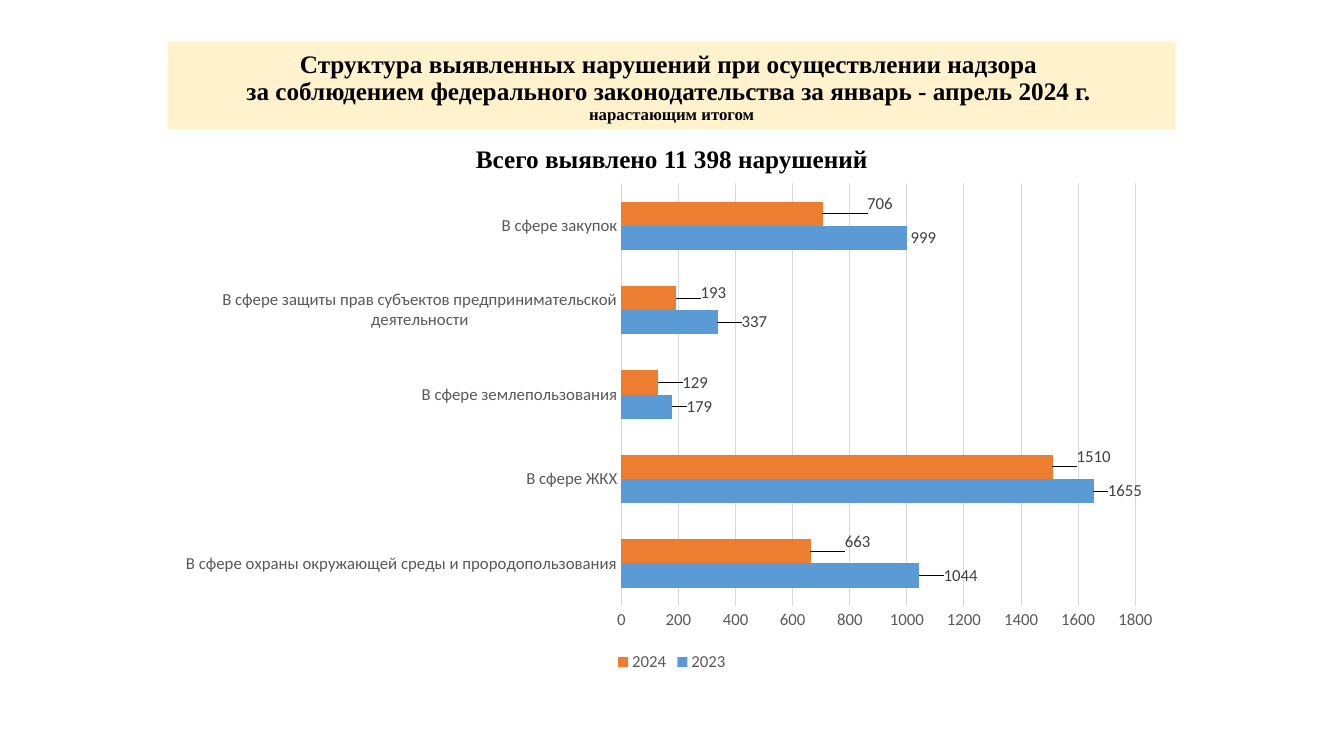
from dataclasses import dataclass

import pptx
import pptx.chart.data
import pptx.dml.color
import pptx.enum.chart
import pptx.enum.shapes
import pptx.enum.text
import pptx.oxml
import pptx.oxml.ns
import pptx.util

Cm = pptx.util.Cm
Pt = pptx.util.Pt


@dataclass(frozen=True)
class Theme:
    heading_font: str = "Times New Roman"
    chart_font: str = "Calibri"
    ink: str = "000000"
    banner: str = "FFF2CC"
    axis_text: str = "595959"
    label_text: str = "404040"
    grid: str = "D9D9D9"
    heading_size: int = 18
    note_size: int = 12
    chart_size: int = 12


THEME = Theme()
CATEGORIES = [
    "В сфере охраны окружающей среды и прородопользования",
    "В сфере ЖКХ",
    "В сфере землепользования",
    "В сфере защиты прав субъектов предпринимательской деятельности",
    "В сфере закупок",
]
# Year, colour, values, and the shift of each label as a share of the chart
SERIES = [
    ("2023", "5B9BD5", [1044, 1655, 179, 337, 999],
     [(0.02, 0), (0.01, 0), (0.01, 0), (0.02, 0), (0, 0)]),
    ("2024", "ED7D31", [663, 1510, 129, 193, 706],
     [(0.03, -0.02), (0.02, -0.02), (0.02, 0), (0.02, -0.01), (0.04, -0.02)]),
]


def rgb(value):
    return pptx.dml.color.RGBColor.from_string(value)


def set_all(target, values):
    for name, value in values.items():
        setattr(target, name, value)


def style_font(font, name, size, color, bold=False):
    set_all(font, {"name": name, "size": Pt(size), "bold": bold})
    font.color.rgb = rgb(color)


def add_heading_span(para, text, size):
    span = para.add_run()
    span.text = text
    style_font(span.font, THEME.heading_font, size, THEME.ink, bold=True)


def manual_layout(**values):
    """Build a c:layout element from its child names and values."""
    children = "".join(f'<c:{name} val="{value}"/>' for name, value in values.items())
    return pptx.oxml.parse_xml(
        f'<c:layout {pptx.oxml.ns.nsdecls("c")}>'
        f"<c:manualLayout>{children}</c:manualLayout></c:layout>"
    )


def add_banner(page, left, top, width, height):
    box = page.shapes.add_shape(
        pptx.enum.shapes.MSO_SHAPE.RECTANGLE, left, top, width, height)
    box.shadow.inherit = False
    box.fill.solid()
    box.fill.fore_color.rgb = rgb(THEME.banner)
    box.line.fill.background()
    set_all(box.text_frame, {
        "word_wrap": True,
        "vertical_anchor": pptx.enum.text.MSO_ANCHOR.BOTTOM,
    })
    para = box.text_frame.paragraphs[0]
    set_all(para, {"alignment": pptx.enum.text.PP_ALIGN.CENTER, "line_spacing": 0.9})
    for line in ("Структура выявленных нарушений при осуществлении надзора ",
                 "за соблюдением федерального законодательства за январь - апрель 2024 г. "):
        add_heading_span(para, line, THEME.heading_size)
        para.add_line_break()
    add_heading_span(para, "нарастающим итогом", THEME.note_size)


def add_total(page, left, top, width, height):
    box = page.shapes.add_textbox(left, top, width, height)
    box.text_frame.word_wrap = True
    para = box.text_frame.paragraphs[0]
    set_all(para, {"alignment": pptx.enum.text.PP_ALIGN.CENTER, "line_spacing": 0.8})
    add_heading_span(para, "Всего выявлено 11 398 нарушений", THEME.heading_size)


def style_axis(axis):
    none = pptx.enum.chart.XL_TICK_MARK.NONE
    set_all(axis, {"major_tick_mark": none, "minor_tick_mark": none})
    axis.format.line.fill.background()
    style_font(axis.tick_labels.font, THEME.chart_font, THEME.chart_size, THEME.axis_text)


def style_series(series, color, shifts):
    series.format.fill.solid()
    series.format.fill.fore_color.rgb = rgb(color)
    series.invert_if_negative = False
    outside = pptx.enum.chart.XL_LABEL_POSITION.OUTSIDE_END
    set_all(series.data_labels, {"show_value": True, "position": outside})
    labels = [series.points[index].data_label for index in range(len(shifts))]
    for label in [series.data_labels, *labels]:
        label.position = outside
        style_font(label.font, THEME.chart_font, THEME.chart_size, THEME.label_text)
    point_labels = series.data_labels._element.findall(pptx.oxml.ns.qn("c:dLbl"))
    for element, (across, down) in zip(point_labels, shifts):
        element.insert(1, manual_layout(x=across, y=down))


def add_violations_chart(page, left, top, width, height):
    data = pptx.chart.data.CategoryChartData()
    data.categories = CATEGORIES
    for year, _, values, _ in SERIES:
        data.add_series(year, values)
    chart = page.shapes.add_chart(
        pptx.enum.chart.XL_CHART_TYPE.BAR_CLUSTERED, left, top, width, height, data).chart
    set_all(chart, {"has_title": False, "has_legend": True})
    style_font(chart.font, THEME.chart_font, THEME.chart_size, THEME.ink)
    set_all(chart.legend, {
        "position": pptx.enum.chart.XL_LEGEND_POSITION.BOTTOM,
        "include_in_layout": False,
    })
    style_font(chart.legend.font, THEME.chart_font, THEME.chart_size, THEME.axis_text)

    plot = chart.plots[0]
    set_all(plot, {"gap_width": 150, "overlap": 0, "vary_by_categories": False})
    for series, (_, color, _, shifts) in zip(plot.series, SERIES):
        style_series(series, color, shifts)

    style_axis(chart.category_axis)
    style_axis(chart.value_axis)
    set_all(chart.value_axis, {
        "minimum_scale": 0, "maximum_scale": 1800, "major_unit": 200,
        "has_major_gridlines": True,
    })
    grid = chart.value_axis.major_gridlines.format.line
    grid.width = Pt(0.75)
    grid.color.rgb = rgb(THEME.grid)

    plot_area = chart._chartSpace.chart.plotArea
    for layout in plot_area.findall(pptx.oxml.ns.qn("c:layout")):
        plot_area.remove(layout)
    plot_area.insert(0, manual_layout(
        layoutTarget="inner", xMode="edge", yMode="edge", x=0.45, y=0.02, w=0.51, h=0.84))


def main():
    deck = pptx.Presentation()
    set_all(deck, {"slide_width": Cm(33.87), "slide_height": Cm(19.05)})
    page = deck.slides.add_slide(deck.slide_layouts[6])
    left, width = Cm(4.23), Cm(25.4)
    add_banner(page, left, Cm(1.05), width, Cm(2.2))
    add_total(page, left, Cm(3.63), width, Cm(0.9))
    add_violations_chart(page, left, Cm(4.37), width, Cm(12.67))
    deck.save("out.pptx")


if __name__ == "__main__":
    main()
